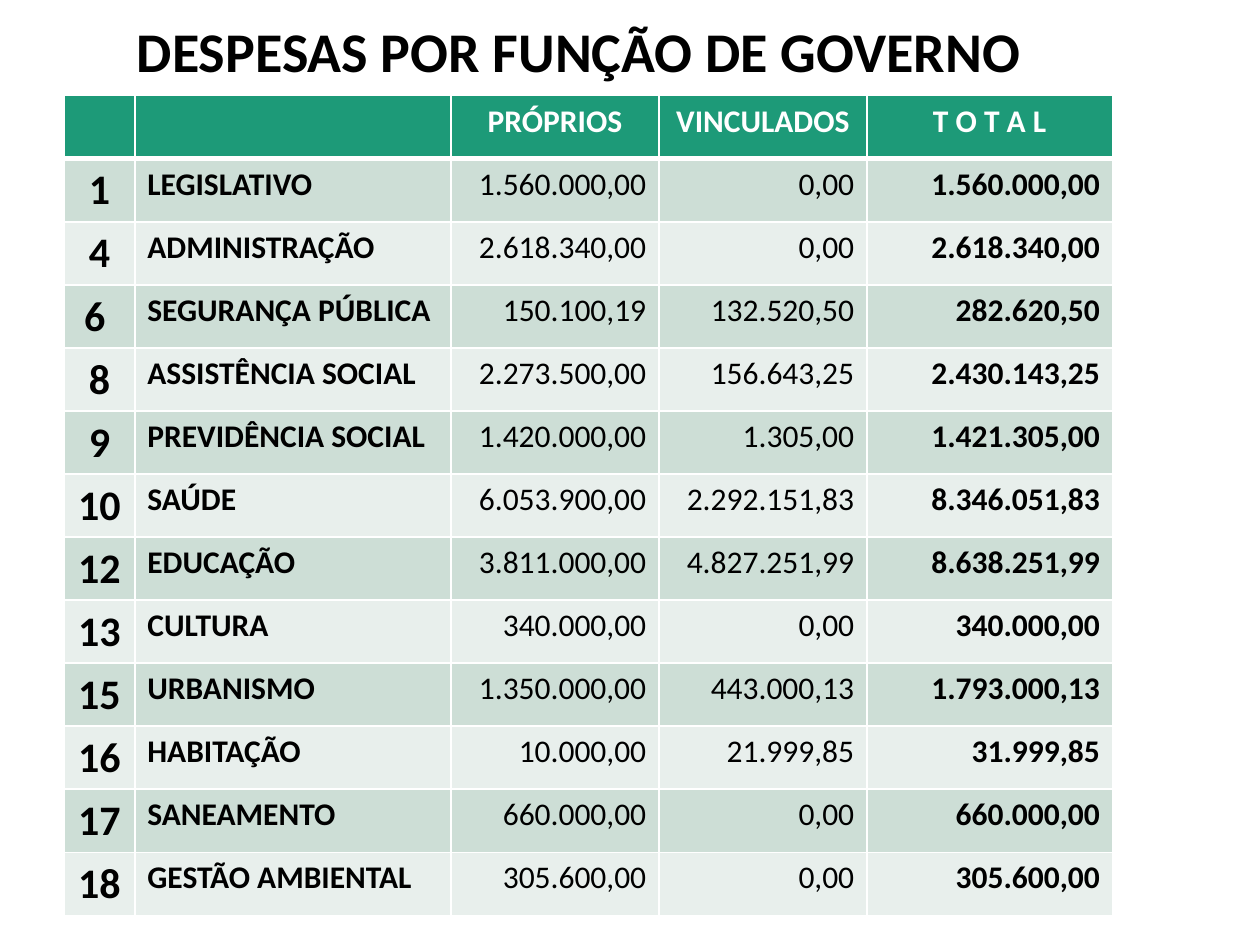
import dataclasses
import typing

import pptx
import pptx.dml.color
import pptx.enum.text
import pptx.oxml.ns
import pptx.util
from lxml import etree

Inches = pptx.util.Inches
Pt = pptx.util.Pt
ALIGN = pptx.enum.text.PP_ALIGN


@dataclasses.dataclass(frozen=True)
class Theme:
    font: str = "Calibri"
    title_size: int = 32
    code_size: int = 24
    body_size: int = 18
    dark: str = "000000"
    light: str = "FFFFFF"
    header_fill: str = "1D9A78"
    bands: tuple = ("CDDED6", "E8EFEC")
    thin: int = 1
    thick: int = 3


@dataclasses.dataclass(frozen=True)
class Column:
    heading: str
    width: float
    size: int
    bold: bool
    align: ALIGN


class Expense(typing.NamedTuple):
    code: str
    function: str
    own: str
    linked: str
    total: str


THEME = Theme()

COLUMNS = [
    Column("", 0.56, THEME.code_size, True, ALIGN.CENTER),
    Column("", 2.51, THEME.body_size, True, ALIGN.LEFT),
    Column("PRÓPRIOS", 1.65, THEME.body_size, False, ALIGN.RIGHT),
    Column("VINCULADOS", 1.65, THEME.body_size, False, ALIGN.RIGHT),
    Column("T O T A L", 1.95, THEME.body_size, True, ALIGN.RIGHT),
]

EXPENSES = [
    Expense("1", "LEGISLATIVO", "1.560.000,00", "0,00", "1.560.000,00"),
    Expense("4", "ADMINISTRAÇÃO", "2.618.340,00", "0,00", "2.618.340,00"),
    Expense("6 ", "SEGURANÇA PÚBLICA", "150.100,19", "132.520,50", "282.620,50"),
    Expense("8", "ASSISTÊNCIA SOCIAL", "2.273.500,00", "156.643,25", "2.430.143,25"),
    Expense("9", "PREVIDÊNCIA SOCIAL", "1.420.000,00", "1.305,00", "1.421.305,00"),
    Expense("10", "SAÚDE", "6.053.900,00", "2.292.151,83", "8.346.051,83"),
    Expense("12", "EDUCAÇÃO", "3.811.000,00", "4.827.251,99", "8.638.251,99"),
    Expense("13", "CULTURA", "340.000,00", "0,00", "340.000,00"),
    Expense("15", "URBANISMO", "1.350.000,00", "443.000,13", "1.793.000,13"),
    Expense("16", "HABITAÇÃO", "10.000,00", "21.999,85", "31.999,85"),
    Expense("17", "SANEAMENTO", "660.000,00", "0,00", "660.000,00"),
    Expense("18", "GESTÃO AMBIENTAL", "305.600,00", "0,00", "305.600,00"),
]


def rgb(color: str) -> pptx.dml.color.RGBColor:
    return pptx.dml.color.RGBColor.from_string(color)


def write(tf, text: str, size: int, color: str, bold: bool, align: ALIGN) -> None:
    p = tf.paragraphs[0]
    p.alignment = align
    r = p.add_run()
    r.text = text
    formats = {"name": THEME.font, "size": Pt(size), "bold": bold}
    for name, value in formats.items():
        setattr(r.font, name, value)
    r.font.color.rgb = rgb(color)


def set_borders(cell, top: int, bottom: int) -> None:
    tc_pr = cell._tc.get_or_add_tcPr()
    widths = {"lnL": THEME.thin, "lnR": THEME.thin, "lnT": top, "lnB": bottom}
    for tag, width in widths.items():
        ln = etree.SubElement(tc_pr, pptx.oxml.ns.qn(f"a:{tag}"), w=str(Pt(width)))
        fill = etree.SubElement(ln, pptx.oxml.ns.qn("a:solidFill"))
        etree.SubElement(fill, pptx.oxml.ns.qn("a:srgbClr"), val=THEME.light)


def style_cell(cell, fill: str, top: int, bottom: int) -> None:
    set_borders(cell, top, bottom)
    cell.fill.solid()
    cell.fill.fore_color.rgb = rgb(fill)


def add_title(s, text: str) -> None:
    sp = s.shapes.add_textbox(Inches(0.43), Inches(0.13), Inches(8.33), Inches(0.61))
    tf = sp.text_frame
    tf.word_wrap = True
    tf.vertical_anchor = pptx.enum.text.MSO_ANCHOR.MIDDLE
    write(tf, text, THEME.title_size, THEME.dark, True, ALIGN.CENTER)
    tf.paragraphs[0].line_spacing = 0.9


def add_expense_table(s) -> None:
    rows = len(EXPENSES) + 1
    width = sum(column.width for column in COLUMNS)
    table = s.shapes.add_table(
        rows, len(COLUMNS), Inches(0.51), Inches(0.76), Inches(width), Inches(0.5 * rows)
    ).table

    # Header row
    for i, column in enumerate(COLUMNS):
        table.columns[i].width = Inches(column.width)
        cell = table.cell(0, i)
        style_cell(cell, THEME.header_fill, THEME.thin, THEME.thick)
        if column.heading:
            write(cell.text_frame, column.heading, THEME.body_size,
                  THEME.light, True, ALIGN.CENTER)

    # Banded rows, one per government function
    for n, expense in enumerate(EXPENSES):
        top = THEME.thick if n == 0 else THEME.thin
        for i, (column, text) in enumerate(zip(COLUMNS, expense)):
            cell = table.cell(n + 1, i)
            style_cell(cell, THEME.bands[n % 2], top, THEME.thin)
            write(cell.text_frame, text, column.size, THEME.dark,
                  column.bold, column.align)


def main() -> None:
    prs = pptx.Presentation()
    prs.slide_width, prs.slide_height = Inches(10), Inches(7.5)
    s = prs.slides.add_slide(prs.slide_layouts[6])
    add_title(s, "DESPESAS POR FUNÇÃO DE GOVERNO")
    add_expense_table(s)
    prs.save("out.pptx")


if __name__ == "__main__":
    main()
